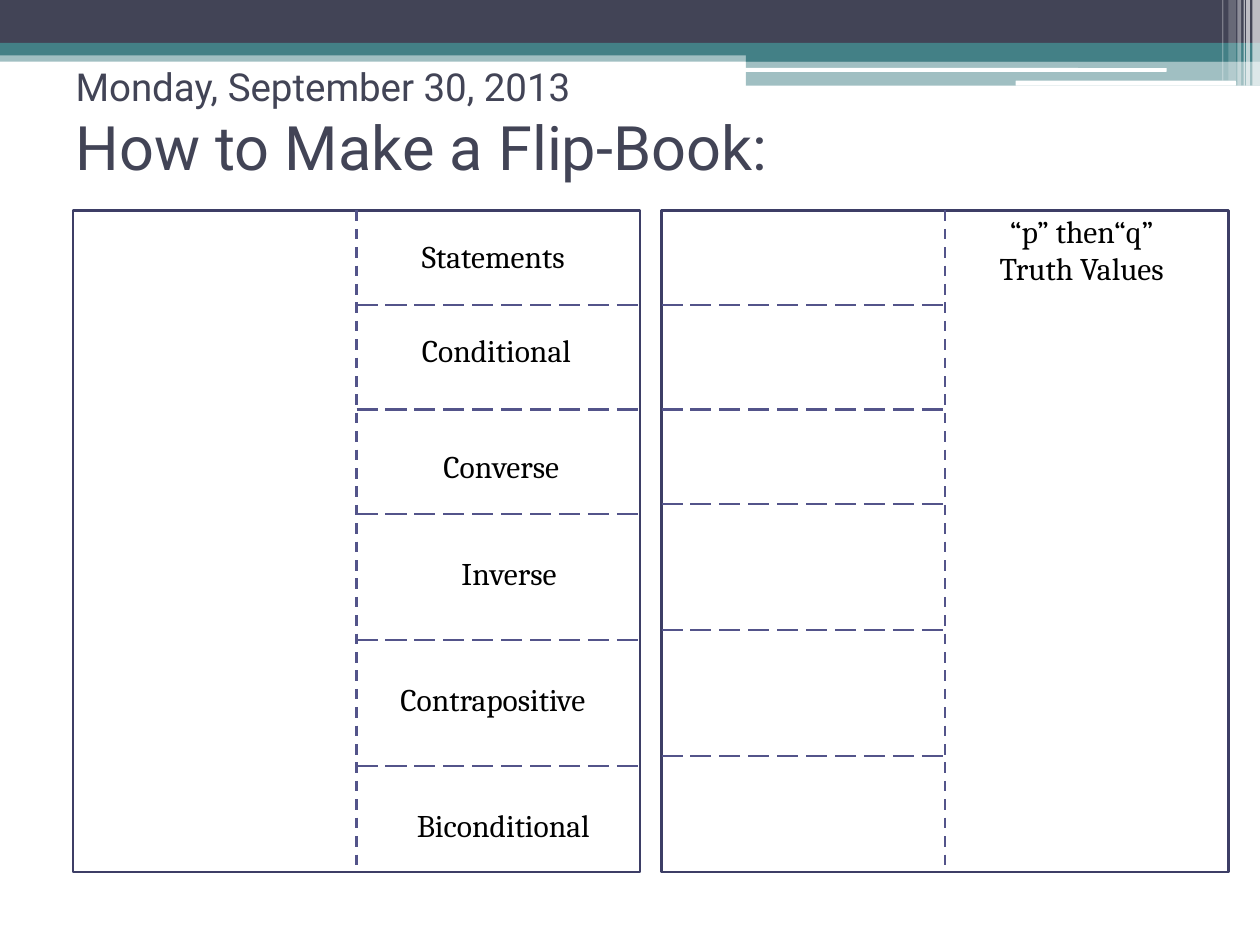
from pptx import Presentation
from pptx.dml.color import RGBColor as Rgb
from pptx.enum.dml import MSO_LINE as Dash
from pptx.enum.shapes import MSO_CONNECTOR as Link, MSO_SHAPE as Kind
from pptx.enum.text import MSO_ANCHOR as Anchor, MSO_AUTO_SIZE as Auto, PP_ALIGN as Align
from pptx.oxml.ns import qn
from pptx.util import Inches, Pt
from lxml.etree import SubElement as Sub

HUES = {"white": "FFFFFF", "slate": "424456", "teal": "438086",
        "edge": "3D3E66", "fold": "53548A", "ink": "000000"}


def hue(name):
    return Rgb.from_string(HUES[name])


def put(item, form):
    for key, val in form.items():
        setattr(item, key, val)


class Deck:
    label = {"size": Pt(18), "name": "Cambria"}
    frame = {"word_wrap": True, "auto_size": Auto.SHAPE_TO_FIT_TEXT}
    weight = Pt(1.5)

    def __init__(self, wide, high):
        self.file = Presentation()
        put(self.file, {"slide_width": Inches(wide), "slide_height": Inches(high)})
        self.slide = self.file.slides.add_slide(self.file.slide_layouts[5])
        self.shapes = self.slide.shapes

    def title(self, box, lines):
        item = self.shapes.title
        put(item, dict(zip(("left", "top", "width", "height"), map(Inches, box))))
        text = item.text_frame
        put(text, {"word_wrap": True, "auto_size": Auto.NONE,
                   "vertical_anchor": Anchor.TOP, "margin_top": Inches(0.08)})
        para = text.paragraphs[0]
        para.alignment = Align.LEFT
        for i, (words, size) in enumerate(lines):
            if i:
                para.add_line_break()
            run = para.add_run()
            run.text = words
            put(run.font, {"size": Pt(size), "name": "Roboto"})
            run.font.color.rgb = hue("slate")

    def block(self, box, fill, alpha=100, edge=None, kind=Kind.RECTANGLE):
        item = self.shapes.add_shape(kind, *map(Inches, box))
        item.shadow.inherit = False
        item.fill.solid()
        item.fill.fore_color.rgb = hue(fill)
        if alpha < 100:
            tint = item.fill._xPr.find(".//" + qn("a:srgbClr"))
            Sub(tint, qn("a:alpha")).set("val", str(alpha * 1000))
        if edge:
            item.line.color.rgb = hue(edge)
            item.line.width = self.weight
        else:
            item.line.fill.background()
        return item

    def line(self, start, end, dash):
        item = self.shapes.add_connector(Link.STRAIGHT, *map(Inches, start + end))
        item.line.color.rgb = hue("fold")
        put(item.line, {"width": self.weight, "dash_style": dash})
        Sub(item._element.spPr, qn("a:effectLst"))
        return item

    def text(self, box, lines, align=Align.LEFT):
        text = self.shapes.add_textbox(*map(Inches, box)).text_frame
        put(text, self.frame)
        for i, words in enumerate(lines):
            para = text.add_paragraph() if i else text.paragraphs[0]
            para.alignment = align
            run = para.add_run()
            run.text = words
            put(run.font, self.label)
            run.font.color.rgb = hue("ink")

    def page(self, left, top, wide, high, flap, cuts):
        sheet = self.block((left, top, wide, high), "white", edge="edge")
        mid = left + wide / 2
        fold = self.line((mid, top), (mid, top + high), Dash.DASH)
        fold.begin_connect(sheet, 0)
        fold.end_connect(sheet, 2)
        for y in cuts:
            self.line((flap, y), (flap + wide / 2, y), Dash.LONG_DASH)


BANDS = [
    ((0, 0.4, 10, 0.09), "teal", 50),
    ((0, 0, 10, 0.34), "slate", 100),
    ((0, 0.34, 10, 0.1), "teal", 100),
    ((5.92, 0.39, 4.08, 0.1), "teal", 100),
    ((5.92, 0.48, 4.08, 0.2), "teal", 50),
]
PILLS = [(5.91, 0.54, 3.35, 0.03), (8.06, 0.64, 1.75, 0.04)]
STRIPES = [
    (9.94, 0.06, 0.68, 65), (9.89, 0.03, 0.68, 65), (9.87, 0.01, 0.68, 60),
    (9.82, 0.03, 0.68, 40), (9.75, 0.06, 0.64, 20), (9.7, 0.01, 0.64, 30),
]
FLAPS = [
    ("Statements", 3.25, 1.83, 1.58, Align.LEFT),
    ("Conditional", 3.25, 2.58, 1.67, Align.LEFT),
    ("Converse", 3.42, 3.5, 1.42, Align.LEFT),
    ("Inverse", 3.33, 4.35, 1.42, Align.CENTER),
    ("Contrapositive", 3.08, 5.35, 1.83, Align.LEFT),
    ("Biconditional", 3.08, 6.35, 1.83, Align.CENTER),
]


def main():
    deck = Deck(10, 7.5)
    for box, fill, alpha in BANDS:
        deck.block(box, fill, alpha)
    for box in PILLS:
        deck.block(box, "white", kind=Kind.ROUNDED_RECTANGLE)
    for x, wide, high, alpha in STRIPES:
        deck.block((x, 0, wide, high), "white", alpha)
    deck.title((0.5, 0.42, 9, 1.17),
               [("Monday, September 30, 2013", 22), ("How to Make a Flip-Book:", 35)])
    deck.page(0.58, 1.67, 4.5, 5.25, 2.83, (2.42, 3.25, 4.08, 5.08, 6.08))
    for words, x, y, wide, align in FLAPS:
        deck.text((x, y, wide, 0.4), [words], align)
    deck.page(5.25, 1.67, 4.5, 5.25, 5.25, (2.42, 3.25, 4, 5, 6))
    deck.text((7.5, 1.63, 2.17, 0.71), ["“p” then“q”", "Truth Values"], Align.CENTER)
    deck.file.save("out.pptx")


if __name__ == "__main__":
    main()
